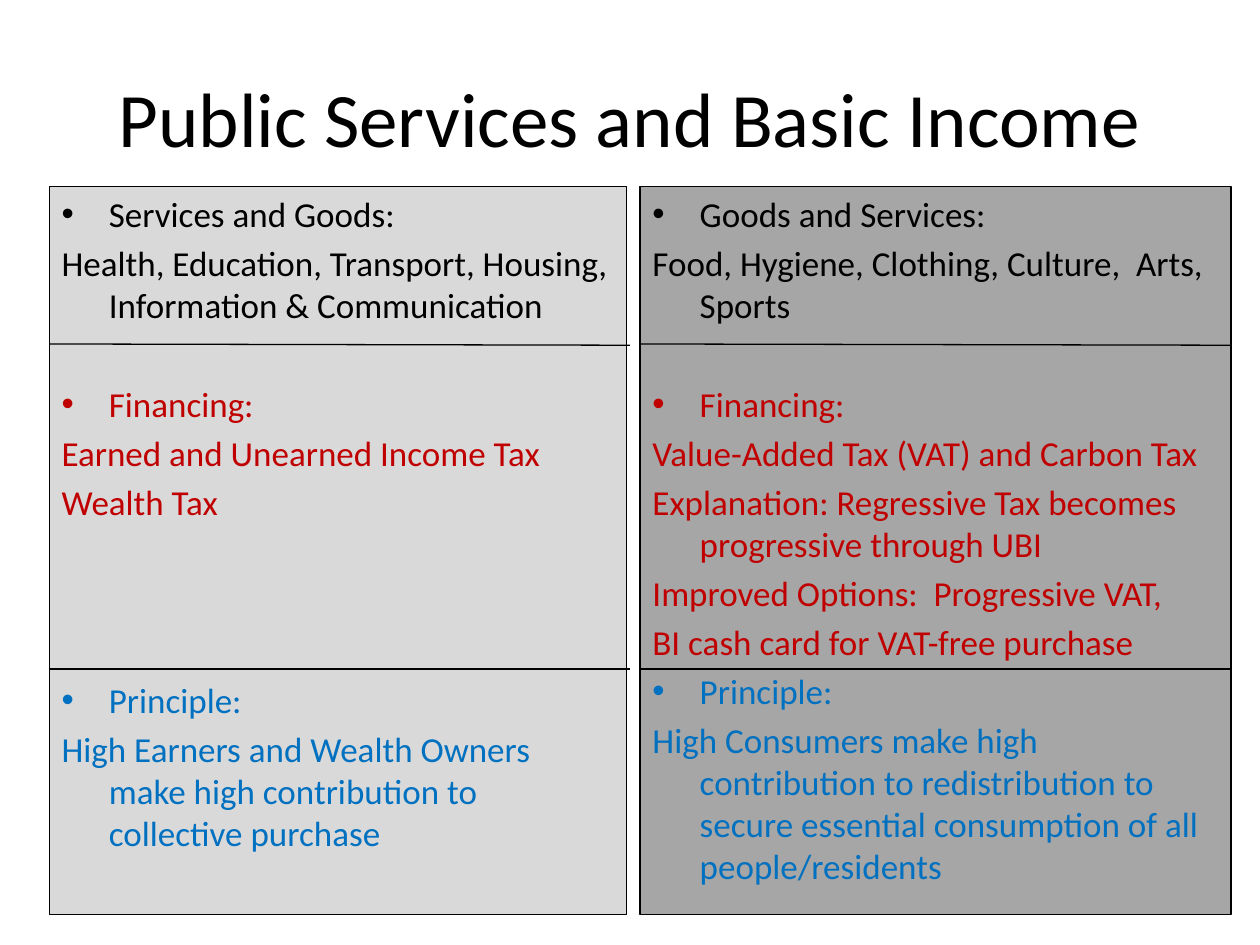
from pptx import Presentation
from pptx.dml.color import RGBColor
from pptx.enum.shapes import MSO_CONNECTOR, MSO_SHAPE
from pptx.enum.text import MSO_ANCHOR, PP_ALIGN
from pptx.oxml.ns import qn
from pptx.util import Inches, Pt
from lxml import etree

RECTANGLE = MSO_SHAPE.RECTANGLE
STRAIGHT = MSO_CONNECTOR.STRAIGHT
TOP, MIDDLE = MSO_ANCHOR.TOP, MSO_ANCHOR.MIDDLE
LEFT, CENTER = PP_ALIGN.LEFT, PP_ALIGN.CENTER

BLACK, RED, BLUE = "000000", "C00000", "0070C0"
LIGHT_GRAY, DARK_GRAY = "D9D9D9", "A6A6A6"

# The grid divides the slide into fine square cells.
COLUMNS, ROWS = 1000, 750
PANEL_TOP, PANEL_HEIGHT = 148, 578
DIVIDERS = [(273, 274), (531, 531)]  # start row, end row


def color(hex_string):
    return RGBColor.from_string(hex_string)


class SlideBuilder:
    font_name = "Calibri"
    title_size, body_size = 44, 20
    paragraph_gap, blank_line = 4, 28.4
    hanging_indent = Inches(0.375)
    line_width = 0.75

    def __init__(self, presentation):
        self.column = presentation.slide_width / COLUMNS
        self.row = presentation.slide_height / ROWS
        self.slide = presentation.slides.add_slide(presentation.slide_layouts[6])

    def place(self, left, top, width, height):
        """Turn grid columns and rows into slide lengths."""
        return (round(left * self.column), round(top * self.row),
                round(width * self.column), round(height * self.row))

    def style(self, paragraph, text, size, text_color, alignment):
        paragraph.text = text
        paragraph.alignment = alignment
        paragraph.font.name = self.font_name
        paragraph.font.size = Pt(size)
        paragraph.font.color.rgb = color(text_color)

    def title(self, text, *area):
        frame = self.slide.shapes.add_textbox(*self.place(*area)).text_frame
        frame.word_wrap = True
        frame.vertical_anchor = MIDDLE
        self.style(frame.paragraphs[0], text, self.title_size, BLACK, CENTER)

    def panel(self, left, width, fill, sections):
        """Draw a filled box; each section is (skipped lines, colour, heading, texts)."""
        shape = self.slide.shapes.add_shape(
            RECTANGLE, *self.place(left, PANEL_TOP, width, PANEL_HEIGHT))
        shape.shadow.inherit = False
        shape.fill.solid()
        shape.fill.fore_color.rgb = color(fill)
        shape.line.color.rgb = color(BLACK)
        shape.line.width = Pt(self.line_width)
        frame = shape.text_frame
        frame.word_wrap = True
        frame.vertical_anchor = TOP
        paragraph = frame.paragraphs[0]
        for number, (skipped, text_color, heading, texts) in enumerate(sections):
            if number:
                paragraph = frame.add_paragraph()
            self.hanging(paragraph, heading, text_color, skipped, bullet=True)
            for text in texts:
                self.hanging(frame.add_paragraph(), text, text_color)

    def hanging(self, paragraph, text, text_color, skipped=0, bullet=False):
        self.style(paragraph, text, self.body_size, text_color, LEFT)
        paragraph.space_before = Pt(self.paragraph_gap + skipped * self.blank_line)
        properties = paragraph._p.get_or_add_pPr()
        properties.set("marL", str(self.hanging_indent))
        properties.set("indent", str(-self.hanging_indent))
        if bullet:
            etree.SubElement(properties, qn("a:buFont")).set("typeface", "Arial")
            etree.SubElement(properties, qn("a:buChar")).set("char", "•")
            # The schema wants the default run properties after the bullet.
            properties.append(properties.find(qn("a:defRPr")))

    def divider(self, left, right, start_row, end_row):
        connector = self.slide.shapes.add_connector(
            STRAIGHT, *self.place(left, start_row, right, end_row))
        connector.line.color.rgb = color(BLACK)
        connector.line.width = Pt(self.line_width)
        etree.SubElement(connector._element.spPr, qn("a:effectLst"))


SERVICES = [
    (0, BLACK, "Services and Goods:",
     ["Health, Education, Transport, Housing, Information & Communication"]),
    (1, RED, "Financing:", ["Earned and Unearned Income Tax", "Wealth Tax"]),
    (3, BLUE, "Principle:",
     ["High Earners and Wealth Owners make high contribution to collective purchase"]),
]
BASIC_INCOME = [
    (0, BLACK, "Goods and Services:",
     ["Food, Hygiene, Clothing, Culture,  Arts, Sports"]),
    (1, RED, "Financing:",
     ["Value-Added Tax (VAT) and Carbon Tax",
      "Explanation: Regressive Tax becomes progressive through UBI",
      "Improved Options:  Progressive VAT,",
      "BI cash card for VAT-free purchase"]),
    (0, BLUE, "Principle:",
     ["High Consumers make high contribution to redistribution to secure "
      "essential consumption of all people/residents"]),
]


def main():
    presentation = Presentation()
    presentation.slide_width, presentation.slide_height = Inches(10), Inches(7.5)
    builder = SlideBuilder(presentation)
    builder.title("Public Services and Basic Income", 50, 30, 900, 125)
    builder.panel(39, 458, LIGHT_GRAY, SERVICES)
    builder.panel(508, 469, DARK_GRAY, BASIC_INCOME)
    for start_row, end_row in DIVIDERS:
        for left, right in ((39, 500), (508, 977)):
            builder.divider(left, right, start_row, end_row)
    presentation.save("out.pptx")


if __name__ == "__main__":
    main()
